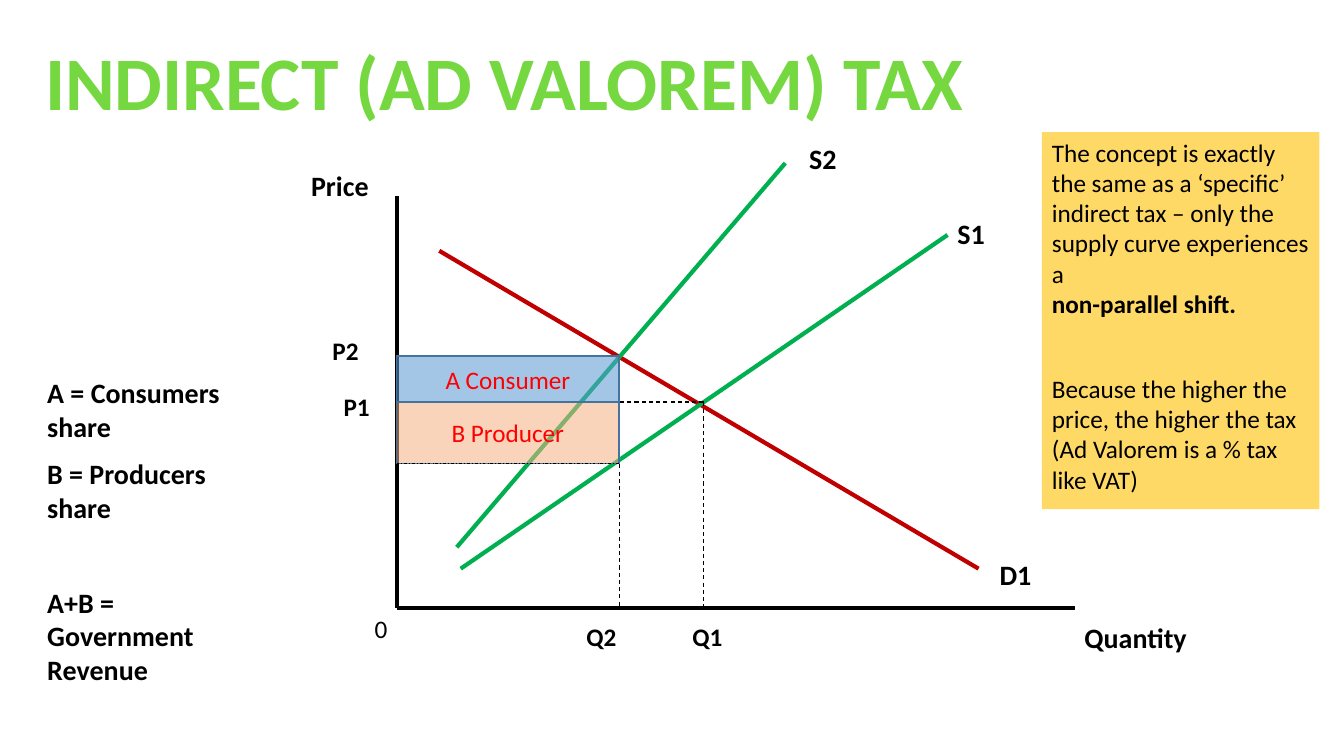
from lxml import etree
from pptx import Presentation
from pptx import util as u
from pptx.dml.color import RGBColor
from pptx.enum import dml, shapes, text
from pptx.oxml import ns

BLACK, RED, GREEN = "000000", "C00000", "00B050"
DASH, DASH_DOT = dml.MSO_LINE.DASH, dml.MSO_LINE.DASH_DOT

# Positions on the diagram, in cm
ORIGIN_X, ORIGIN_Y = 10, 15.32
P1, P2, NET_PRICE = 10.13, 8.97, 11.68
Q1, Q2 = 17.73, 15.6


def colour(hex_code):
    return RGBColor.from_string(hex_code)


def write(frame, paragraphs, size=18, bold=False, ink=BLACK, align=text.PP_ALIGN.LEFT,
          anchor=text.MSO_ANCHOR.TOP, wrap=True, gaps=()):
    """Write paragraphs; gaps holds the space in points before each of them."""
    frame.word_wrap = wrap
    frame.vertical_anchor = anchor
    for index, words in enumerate(paragraphs):
        para = frame.paragraphs[0] if index == 0 else frame.add_paragraph()
        para.text = words
        para.alignment = align
        if gaps:
            para.space_before = u.Pt(gaps[index])
        for span in para.runs:
            span.font.name = "Calibri"
            span.font.size = u.Pt(size)
            span.font.bold = bold
            span.font.color.rgb = colour(ink)


def add_text(page, left, top, width, height, *paragraphs, **style):
    box = page.shapes.add_textbox(u.Cm(left), u.Cm(top), u.Cm(width), u.Cm(height))
    write(box.text_frame, paragraphs, **style)


def add_line(page, x1, y1, x2, y2, ink=BLACK, weight=3, dash=None):
    line = page.shapes.add_connector(
        shapes.MSO_CONNECTOR.STRAIGHT, u.Cm(x1), u.Cm(y1), u.Cm(x2), u.Cm(y2))
    line.line.color.rgb = colour(ink)
    line.line.width = u.Pt(weight)
    if dash:
        line.line.dash_style = dash
    etree.SubElement(line._element.spPr, ns.qn("a:effectLst"))


def add_box(page, left, top, width, height, fill, border=None, opacity=100):
    box = page.shapes.add_shape(
        shapes.MSO_SHAPE.RECTANGLE, u.Cm(left), u.Cm(top), u.Cm(width), u.Cm(height))
    box.shadow.inherit = False
    box.fill.solid()
    box.fill.fore_color.rgb = colour(fill)
    if opacity < 100:
        tint = box._element.spPr.find(".//" + ns.qn("a:srgbClr"))
        etree.SubElement(tint, ns.qn("a:alpha"), val=str(opacity * 1000))
    if border:
        box.line.color.rgb = colour(border)
        box.line.width = u.Pt(1)
    else:
        box.line.fill.background()
    return box.text_frame


def add_curves(page):
    # Axes
    add_line(page, ORIGIN_X, 4.93, ORIGIN_X, ORIGIN_Y)
    add_line(page, ORIGIN_X, ORIGIN_Y, 27.08, ORIGIN_Y)
    # Demand and the two supply curves
    add_line(page, 11.07, 6.32, 24.66, 14.33, RED)
    add_line(page, 11.61, 14.33, 23.88, 5.92, GREEN)
    add_line(page, 19.79, 4.11, 11.51, 13.79, GREEN)
    # Guides from each equilibrium to the axes
    for quantity, price in ((Q1, P1), (Q2, P2)):
        add_line(page, quantity, price, ORIGIN_X, price, weight=0.75, dash=DASH)
        add_line(page, quantity, price, quantity, ORIGIN_Y, weight=0.75, dash=DASH)


def add_labels(page):
    for name, left, top, width in (
            ("Price", 7.59, 4.11, 3.73), ("Quantity", 27.08, 15.52, 4.01),
            ("D1", 24.94, 13.92, 2.67), ("S1", 23.88, 5.33, 3.2),
            ("S2", 20.14, 3.45, 2.13)):
        add_text(page, left, top, width, 1.12, name, size=20, bold=True)
    for name, left, top in (("P1", 8.41, 9.73), ("P2", 8.13, 8.33),
                            ("Q1", 17.2, 15.52), ("Q2", 14.53, 15.52)):
        add_text(page, left, top, 1.88, 1.02, name, bold=True)
    add_text(page, 9.19, ORIGIN_Y, 2.95, 1.02, "0")


def add_tax_shares(page):
    for name, top, bottom, fill, opacity in (
            ("B Producer", P1, NET_PRICE, "F4B183", 54),
            ("A Consumer", P2, P1, "5B9BD5", 56)):
        frame = add_box(page, ORIGIN_X, top, Q2 - ORIGIN_X, bottom - top,
                        fill, "43739E", opacity)
        write(frame, [name], ink="FF0000", align=text.PP_ALIGN.CENTER,
              anchor=text.MSO_ANCHOR.MIDDLE)
    add_line(page, Q2, NET_PRICE, ORIGIN_X, NET_PRICE, weight=0.5, dash=DASH_DOT)


def main():
    deck = Presentation()
    deck.slide_width, deck.slide_height = u.Cm(33.87), u.Cm(19.05)
    page = deck.slides.add_slide(deck.slide_layouts[6])

    # Diagram
    add_curves(page)
    add_labels(page)
    add_tax_shares(page)

    # Explanation on the right
    note = add_box(page, 26.26, 3.33, 6.99, 9.5, "FFD966")
    write(note, ["The concept is exactly the same as a ‘specific’ indirect tax – only the "
                 "supply curve experiences a \vnon-parallel shift.",
                 "Because the higher the price, the higher the tax "
                 "(Ad Valorem is a % tax like VAT)"], gaps=(0, 39))
    note.paragraphs[0].runs[-1].font.bold = True

    # Key on the left
    add_text(page, 0.94, 9.35, 5.05, 8.38, "A = Consumers share", "B = Producers share",
             "A+B = Government Revenue", size=20, bold=True, gaps=(0, 9.6, 43.7))

    # Title
    add_text(page, 0.76, 0.76, 23.9, 2.57, "INDIRECT (AD VALOREM) TAX", size=54, bold=True,
             ink="75D840", align=text.PP_ALIGN.CENTER, wrap=False)

    deck.save("out.pptx")


if __name__ == "__main__":
    main()
